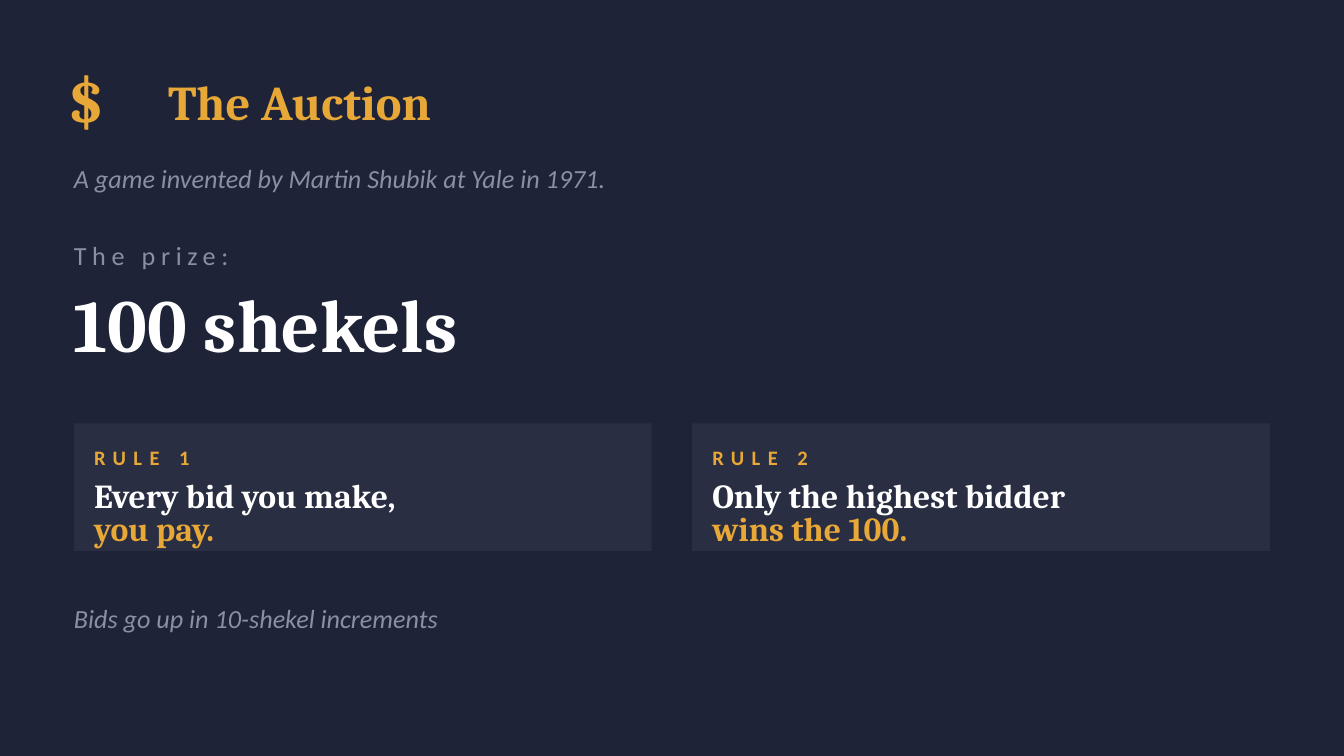
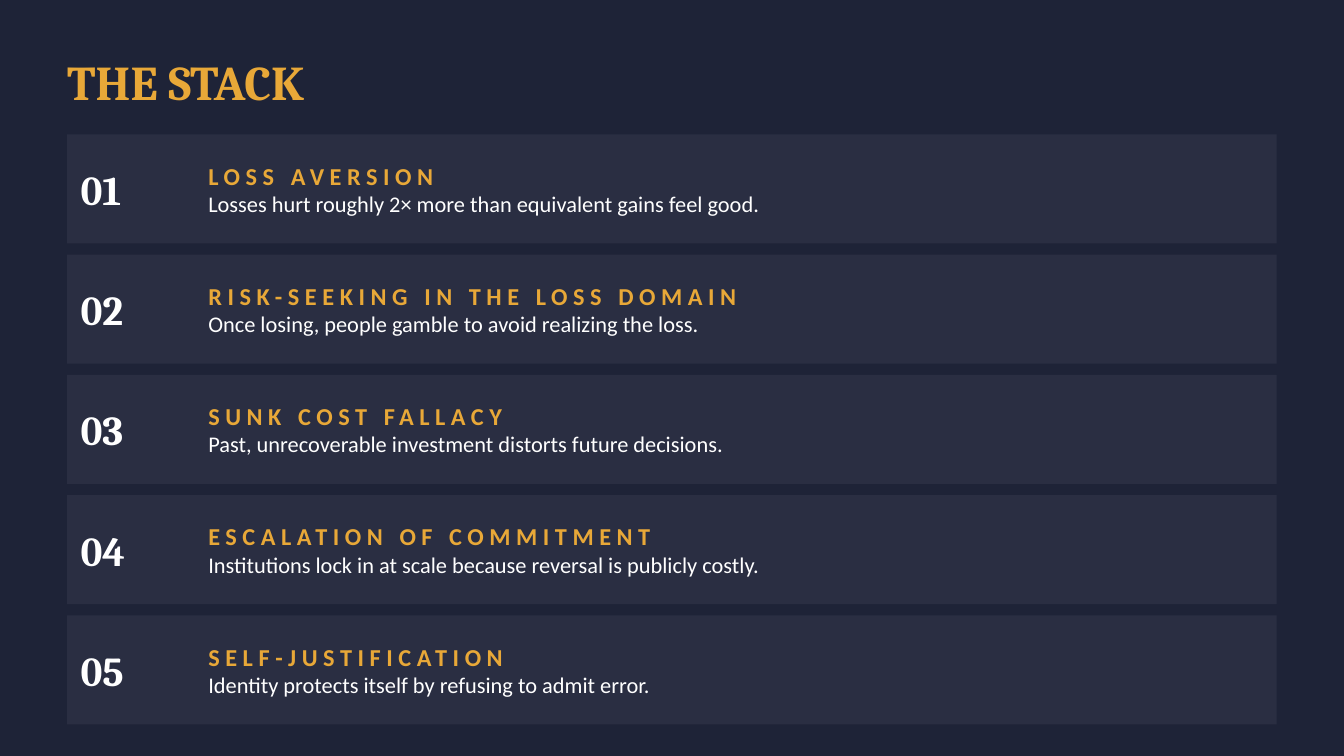
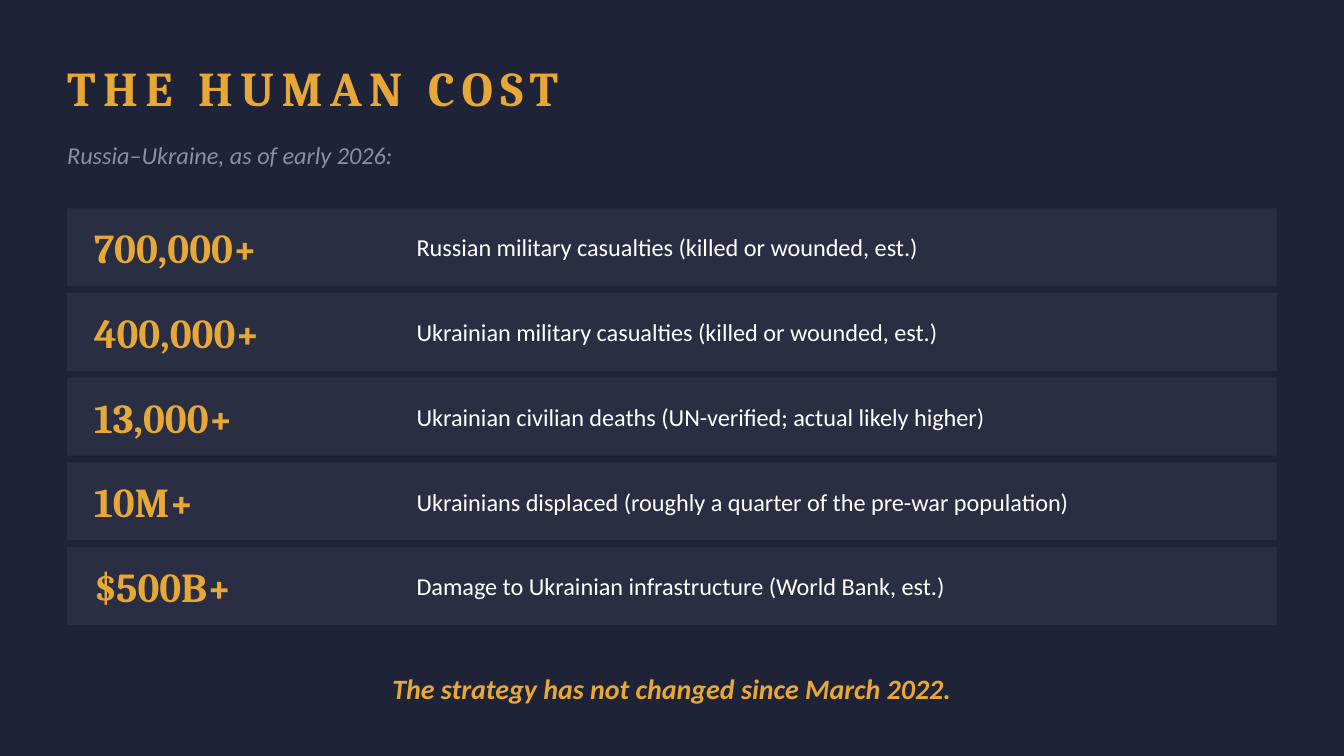
from pptx import Presentation
from pptx.dml.color import RGBColor
from pptx.enum.shapes import MSO_SHAPE
from pptx.enum.text import MSO_ANCHOR, PP_ALIGN
from pptx.util import Pt

# Shared look
NAVY, PANEL = "1E2337", "2A2E42"
GOLD, GREY, WHITE = "E8A838", "8B8FA3", "FFFFFF"
HEAD, BODY = "Cambria", "Calibri"
LEFT, WIDE = 36, 648

# Text styles: font, size, colour, bold, italic, letter spacing in points
TITLE = (HEAD, 26, GOLD, True, False, 0)
SPACED = (HEAD, 26, GOLD, True, False, 4)
NOTE = (BODY, 14, GREY, False, True, 0)

color = RGBColor.from_string


def write(slide, x, y, w, h, *lines, align=PP_ALIGN.LEFT):
    """Add a text box; each line is a (text, style) pair."""
    frame = slide.shapes.add_textbox(Pt(x), Pt(y), Pt(w), Pt(h)).text_frame
    frame.word_wrap = True
    frame.vertical_anchor = MSO_ANCHOR.MIDDLE
    frame.margin_left = frame.margin_right = 0
    frame.margin_top = frame.margin_bottom = 0
    frame.text = "\n".join(text for text, style in lines)
    for para, (text, style) in zip(frame.paragraphs, lines):
        para.alignment = align
        run = para.runs[0]
        font = run.font
        font.name, size, ink, font.bold, font.italic, gap = style
        font.size = Pt(size)
        font.color.rgb = color(ink)
        if gap:
            run._r.get_or_add_rPr().set("spc", str(gap * 100))


def panel(slide, x, y, w, h):
    """Add a plain filled rectangle."""
    box = slide.shapes.add_shape(MSO_SHAPE.RECTANGLE, Pt(x), Pt(y), Pt(w), Pt(h))
    box.shadow.inherit = False
    box.fill.solid()
    box.fill.fore_color.rgb = color(PANEL)
    box.line.fill.background()


# Three dark slides
deck = Presentation()
deck.slide_width, deck.slide_height = Pt(720), Pt(405)
for _ in range(3):
    slide = deck.slides.add_slide(deck.slide_layouts[6])
    slide.background.fill.solid()
    slide.background.fill.fore_color.rgb = color(NAVY)
game, stack, cost = deck.slides

# Slide 1: the auction and its prize
inset = 39.6
write(game, LEFT, 27.4, 50.4, 50.4, ("$", (HEAD, 36, GOLD, True, False, 0)))
write(game, 90, 28.8, 594, 50.4, ("The Auction", TITLE))
write(game, inset, 82.8, 640.8, 25.2,
      ("A game invented by Martin Shubik at Yale in 1971.", NOTE))
write(game, inset, 122.4, 216, 28.8,
      ("The prize:", (BODY, 14, GREY, False, False, 3)))
write(game, inset, 147.6, 288, 50.4,
      ("100 shekels", (HEAD, 40, WHITE, True, False, 0)))

# Rule cards
rules = [
    ("RULE 1", "Every bid you make,", "you pay."),
    ("RULE 2", "Only the highest bidder", "wins the 100."),
]
for i, (label, first, second) in enumerate(rules):
    x = inset + i * 331.2
    panel(game, x, 226.8, 309.6, 68.4)
    x += 10.8
    write(game, x, 234, 144, 21.6, (label, (BODY, 11, GOLD, True, False, 4)))
    write(game, x, 254.2, 288, 21.6, (first, (HEAD, 18, WHITE, True, False, 0)))
    write(game, x, 272.2, 288, 21.6, (second, (HEAD, 18, GOLD, True, False, 0)))
write(game, inset, 316.8, 640.8, 28.8,
      ("Bids go up in 10-shekel increments", NOTE))

# Slide 2: numbered list of biases
write(stack, LEFT, 21.6, WIDE, 43.2, ("THE STACK", TITLE))
biases = [
    ("LOSS AVERSION",
     "Losses hurt roughly 2× more than equivalent gains feel good."),
    ("RISK-SEEKING IN THE LOSS DOMAIN",
     "Once losing, people gamble to avoid realizing the loss."),
    ("SUNK COST FALLACY",
     "Past, unrecoverable investment distorts future decisions."),
    ("ESCALATION OF COMMITMENT",
     "Institutions lock in at scale because reversal is publicly costly."),
    ("SELF-JUSTIFICATION",
     "Identity protects itself by refusing to admit error."),
]
for i, (name, gist) in enumerate(biases):
    y = 72 + i * 64.44
    panel(stack, LEFT, y, WIDE, 58.4)
    write(stack, 43.2, y, 64.8, 58.4,
          (f"{i + 1:02}", (HEAD, 22, WHITE, True, False, 0)))
    write(stack, 111.6, y + 3.6, 565.2, 51.2,
          (name, (BODY, 13, GOLD, True, False, 3)),
          (gist, (BODY, 12, WHITE, False, False, 0)))

# Slide 3: figures of the war
write(cost, LEFT, 25.2, WIDE, 43.2, ("THE HUMAN COST", SPACED))
write(cost, LEFT, 68.4, WIDE, 28.8,
      ("Russia–Ukraine, as of early 2026:", (BODY, 13, GREY, False, True, 0)))
tolls = [
    ("700,000+", "Russian military casualties (killed or wounded, est.)"),
    ("400,000+", "Ukrainian military casualties (killed or wounded, est.)"),
    ("13,000+", "Ukrainian civilian deaths (UN-verified; actual likely higher)"),
    ("10M+", "Ukrainians displaced (roughly a quarter of the pre-war population)"),
    ("$500B+", "Damage to Ukrainian infrastructure (World Bank, est.)"),
]
for i, (count, what) in enumerate(tolls):
    y = 111.6 + i * 45.36
    panel(cost, LEFT, y, WIDE, 41.76)
    write(cost, 50.4, y, 165.6, 41.76,
          (count, (HEAD, 22, GOLD, True, False, 0)))
    write(cost, 223.2, y, 446.4, 41.76,
          (what, (BODY, 13, WHITE, False, False, 0)))
write(cost, LEFT, 356.4, WIDE, 25.2,
      ("The strategy has not changed since March 2022.",
       (BODY, 15, GOLD, True, True, 0)), align=PP_ALIGN.CENTER)

deck.save("out.pptx")
